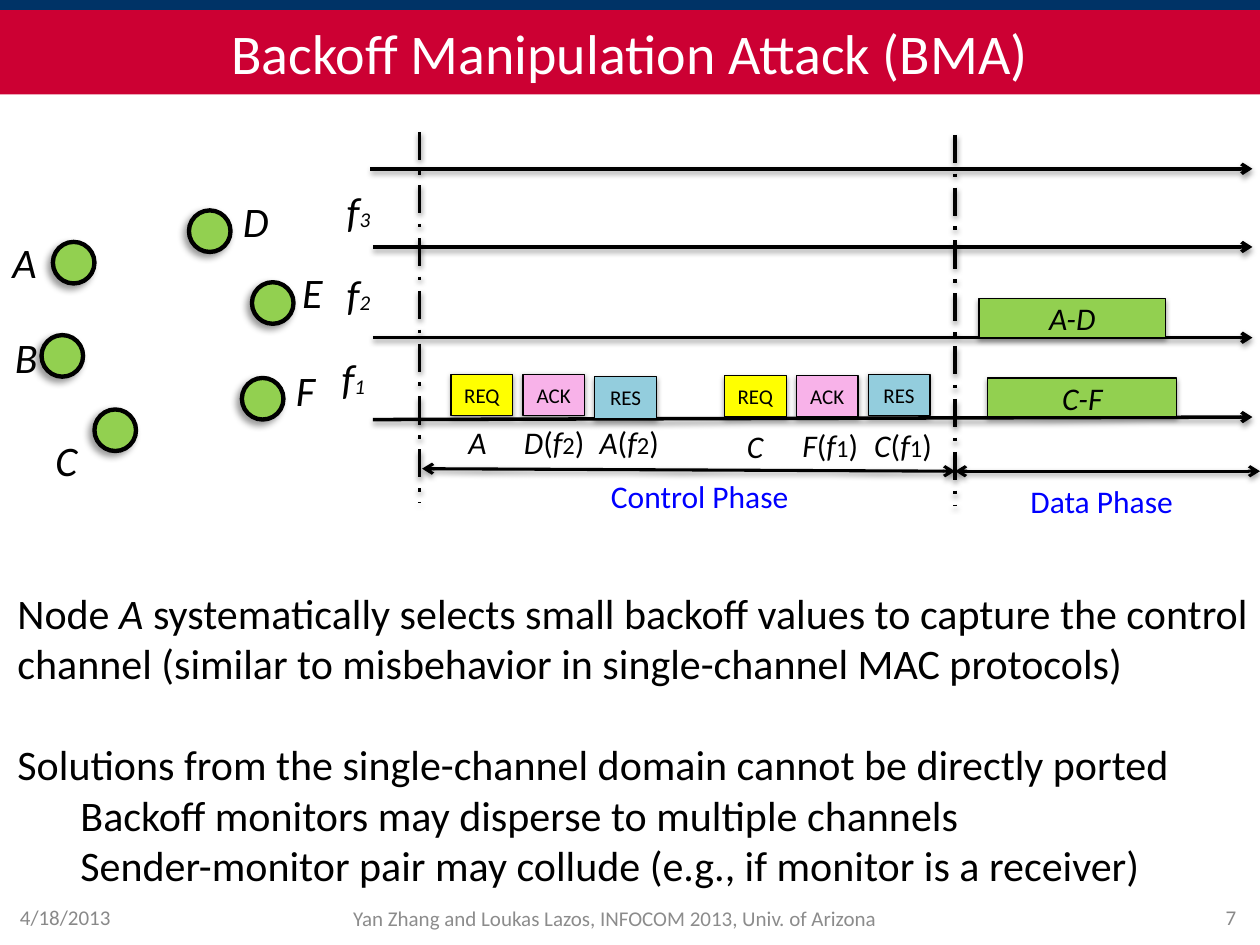
from dataclasses import dataclass

from lxml.etree import SubElement
from pptx import Presentation
from pptx.dml.color import RGBColor
from pptx.enum.dml import MSO_LINE
from pptx.enum.shapes import MSO_CONNECTOR, MSO_SHAPE
from pptx.enum.text import MSO_ANCHOR, PP_ALIGN
from pptx.oxml.ns import qn
from pptx.util import Inches, Pt


@dataclass(frozen=True)
class Theme:
    font: str = "Calibri"
    navy: str = "003366"
    red: str = "CC0033"
    white: str = "FFFFFF"
    black: str = "000000"
    grey: str = "898989"
    footer_grey: str = "8C8C8C"
    blue: str = "0000FF"
    green: str = "92D050"
    yellow: str = "FFFF00"
    pink: str = "F8B2E9"
    teal: str = "93CDDD"
    title: int = 32
    body: int = 24
    label: int = 18
    index: int = 14
    small: int = 12


THEME = Theme()
# Shadows: opacity %, blur pt, distance pt, direction in degrees
SOFT_SHADOW = (38, 3.1, 1.6, 90)
NODE_SHADOW = (40, 4, 3, 135)


@dataclass(frozen=True)
class Box:
    left: float
    top: float
    width: float
    height: float

    def inner(self, left, top, width, height):
        return Box(self.left + left, self.top + top, width, height)

    def lengths(self):
        return [Inches(v) for v in (self.left, self.top, self.width, self.height)]


def set_effects(shape, shadow=None):
    effects = SubElement(shape._element.spPr, qn("a:effectLst"))
    if shadow:
        opacity, blur, distance, angle = shadow
        outer = SubElement(effects, qn("a:outerShdw"), blurRad=str(Pt(blur)),
                           dist=str(Pt(distance)), dir=str(angle * 60000), rotWithShape="0")
        color = SubElement(outer, qn("a:srgbClr"), val=THEME.black)
        SubElement(color, qn("a:alpha"), val=str(opacity * 1000))


def add_span(para, text, size, color=THEME.black, italic=False):
    span = para.add_run()
    span.text = text
    formats = {"name": THEME.font, "size": Pt(size), "italic": italic}
    for name, value in formats.items():
        setattr(span.font, name, value)
    span.font.color.rgb = RGBColor.from_string(color)


def write(shape, spans, align=PP_ALIGN.LEFT, anchor=MSO_ANCHOR.TOP, wrap=True):
    """Each span is (text, size, color, italic); the last two may be left out."""
    frame = shape.text_frame
    for name, value in {"word_wrap": wrap, "vertical_anchor": anchor}.items():
        setattr(frame, name, value)
    para = frame.paragraphs[0]
    para.alignment = align
    for span in spans:
        add_span(para, *span)


def add_text(page, box, spans, **layout):
    write(page.shapes.add_textbox(*box.lengths()), spans, **layout)


def add_block(page, box, fill, spans=(), kind=MSO_SHAPE.RECTANGLE,
              line=None, line_color=THEME.black, shadow=None):
    block = page.shapes.add_shape(kind, *box.lengths())
    block.fill.solid()
    block.fill.fore_color.rgb = RGBColor.from_string(fill)
    if line:
        block.line.color.rgb = RGBColor.from_string(line_color)
        block.line.width = Pt(line)
    else:
        block.line.fill.background()
    set_effects(block, shadow)
    write(block, spans, PP_ALIGN.CENTER, MSO_ANCHOR.MIDDLE)


def add_line(page, box, start, end, width=2, dash=None, arrows=()):
    ends = [Inches(v) for x, y in (start, end) for v in (box.left + x, box.top + y)]
    line = page.shapes.add_connector(MSO_CONNECTOR.STRAIGHT, *ends)
    line.line.color.rgb = RGBColor.from_string(THEME.black)
    line.line.width = Pt(width)
    if dash:
        line.line.dash_style = dash
    for arrow in arrows:
        SubElement(line.line._get_or_add_ln(), qn(f"a:{arrow}"), type="arrow")
    set_effects(line, SOFT_SHADOW)


def add_header(page, box):
    add_block(page, box.inner(0, 0, box.width, 0.08), THEME.navy, line=2, line_color=THEME.navy)
    add_block(page, box.inner(0, 0.08, box.width, 0.67), THEME.red,
              [("Backoff Manipulation Attack (BMA)", THEME.title, THEME.white)])


def add_network(page, box):
    # Name, circle corner, label corner, label width
    nodes = [
        ("A", (0.42, 0.42), (0, 0.33), 0.4),
        ("B", (0.33, 1.16), (0.02, 1.08), 0.4),
        ("C", (0.75, 1.75), (0.34, 1.9), 0.38),
        ("D", (1.5, 0.17), (1.83, 0), 0.41),
        ("E", (2, 0.74), (2.3, 0.57), 0.37),
        ("F", (1.92, 1.5), (2.25, 1.34), 0.36),
    ]
    for name, circle, label, width in nodes:
        add_block(page, box.inner(*circle, 0.33, 0.33), THEME.green,
                  kind=MSO_SHAPE.OVAL, line=2.5, shadow=NODE_SHADOW)
        add_text(page, box.inner(*label, width, 0.5),
                 [(name, THEME.body, THEME.black, True)], wrap=False)


def add_timeline(page, box):
    # Channel axes and phase boundaries
    for start, end in [((0.44, 0.34), 0.34), ((0.46, 0.96), 0.96),
                       ((0.46, 1.68), 1.68), ((0.46, 2.33), 2.31)]:
        add_line(page, box, start, (7.44, end), arrows=["tailEnd"])
    for x, top, bottom in [(0.83, 0.05, 2.99), (5.08, 0.07, 3.02)]:
        add_line(page, box, (x, top), (x, bottom), dash=MSO_LINE.LONG_DASH_DOT)

    # Control packets, one exchange per pair of nodes
    packets = [("REQ", THEME.yellow), ("ACK", THEME.pink), ("RES", THEME.teal)]
    for left, tops in [(1.08, (1.97, 1.97, 1.99)), (3.25, (1.98, 1.98, 1.97))]:
        for column, ((name, fill), top) in enumerate(zip(packets, tops)):
            add_block(page, box.inner(left + 0.57 * column, top, 0.49, 0.33), fill,
                      [(name, THEME.small)], line=0.75, shadow=SOFT_SHADOW)

    # Sender and chosen channel under each packet
    senders = [("A", "", 1.12, 2.31, 0.33), ("D", "2", 1.56, 2.31, 0.73),
               ("A", "2", 2.16, 2.31, 0.82), ("C", "", 3.33, 2.34, 0.33),
               ("F", "1", 3.77, 2.33, 0.73), ("C", "1", 4.34, 2.33, 0.73)]
    for node, channel, left, top, width in senders:
        spans = [(node, THEME.label, THEME.black, True)]
        if channel:
            spans += [("(", THEME.label), ("f", THEME.label, THEME.black, True),
                      (channel, THEME.index), (")", THEME.label)]
        add_text(page, box.inner(left, top, width, 0.4), spans)

    # Data transfers
    for name, left, top, width in [("A-D", 5.27, 1.37, 1.48), ("C-F", 5.34, 2, 1.5)]:
        add_block(page, box.inner(left, top, width, 0.31), THEME.green,
                  [(name, THEME.label, THEME.black, True)], line=0.75, shadow=SOFT_SHADOW)

    # Phase spans and names
    phases = [("Control Phase", (0.85, 2.72), (5.08, 2.74), (2.25, 2.74, 1.75, 0.44)),
              ("Data Phase", (5.08, 2.74), (7.5, 2.74), (5.58, 2.78, 1.46, 0.4))]
    for name, start, end, place in phases:
        add_line(page, box, start, end, width=1.75, arrows=["headEnd", "tailEnd"])
        add_text(page, box.inner(*place), [(name, THEME.label, THEME.blue)])

    # Channel names
    for number, left, top in [("1", 0.08, 1.82), ("2", 0.12, 1.15), ("3", 0.12, 0.49)]:
        add_block(page, box.inner(left, top, 0.45, 0.36), THEME.white,
                  [("f", THEME.body, THEME.black, True),
                   (number, THEME.small, THEME.black, True)],
                  kind=MSO_SHAPE.ROUNDED_RECTANGLE)


def add_body(page, box):
    frame = page.shapes.add_textbox(*box.lengths()).text_frame
    frame.word_wrap = True
    # Spans alternate between upright and italic
    paragraphs = [
        (("Node ", "A", " systematically selects small backoff values to capture the control "
          "channel (similar to misbehavior in single-channel MAC protocols)"), 0, 0),
        (("Solutions from the single-channel domain cannot be directly ported",), 0, 29),
        (("Backoff monitors may disperse to multiple channels",), 1, 0),
        (("Sender-monitor pair may collude (e.g., if monitor is a receiver)",), 1, 0),
    ]
    for number, (texts, level, space) in enumerate(paragraphs):
        para = frame.add_paragraph() if number else frame.paragraphs[0]
        for name, value in {"level": level, "space_before": Pt(space)}.items():
            setattr(para, name, value)
        para._p.get_or_add_pPr().set("marL", str(Inches(0.5 * level)))
        for position, text in enumerate(texts):
            add_span(para, text, THEME.body, italic=position % 2 == 1)


def add_footer(page, box):
    parts = [
        ("4/18/2013", THEME.grey, PP_ALIGN.LEFT, (0.06, 0, 2.33, 0.4)),
        ("Yan Zhang and Loukas Lazos, INFOCOM 2013, Univ. of Arizona",
         THEME.footer_grey, PP_ALIGN.CENTER, (2.67, 0, 4.42, 0.42)),
        ("7", THEME.grey, PP_ALIGN.RIGHT, (7.58, 0, 2.33, 0.4)),
    ]
    for text, color, align, place in parts:
        add_text(page, box.inner(*place), [(text, THEME.small, color)],
                 align=align, anchor=MSO_ANCHOR.MIDDLE)


def main():
    deck = Presentation()
    deck.slide_width, deck.slide_height = Inches(10), Inches(7.5)
    page = deck.slides.add_slide(deck.slide_layouts[6])
    add_header(page, Box(0, 0, 10, 0.75))
    add_body(page, Box(0.04, 4.61, 10.18, 2.52))
    add_footer(page, Box(0, 7.08, 10, 0.42))
    add_network(page, Box(0, 1.5, 2.7, 2.4))
    add_timeline(page, Box(2.5, 1, 7.5, 3.2))
    deck.save("out.pptx")


if __name__ == "__main__":
    main()
